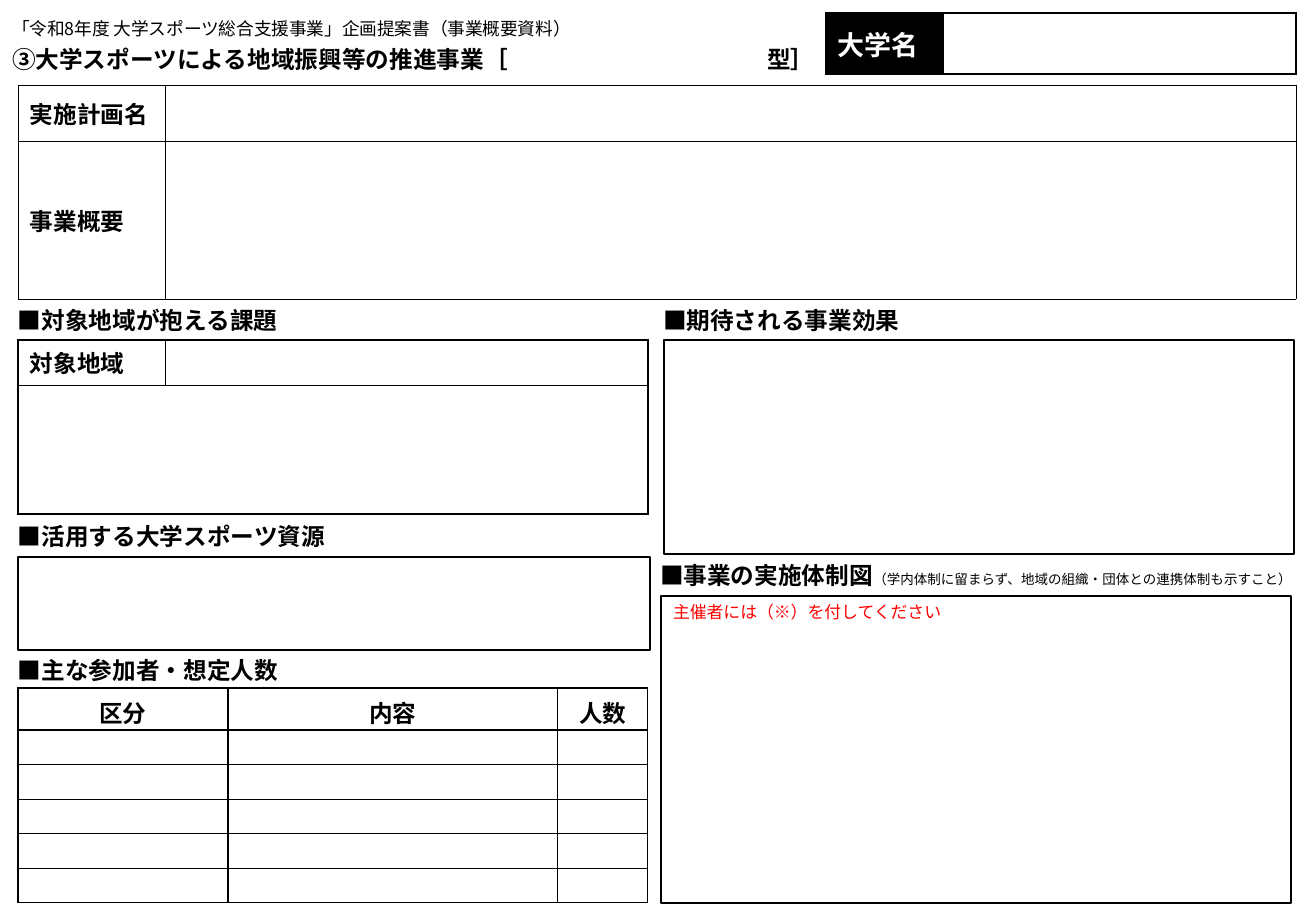
import lxml.etree
import pptx
import pptx.dml.color
import pptx.enum.shapes
import pptx.enum.text
import pptx.oxml.ns
import pptx.util

PX = 7526  # EMU in one px
FONT = "Noto Sans CJK JP"
BLACK, WHITE, RED = "000000", "FFFFFF", "FF0000"
ALIGN = pptx.enum.text.PP_ALIGN
ANCHOR = pptx.enum.text.MSO_ANCHOR

# Content: title lines as (text, size, bold)
TITLE = [
    ("「令和8年度 大学スポーツ総合支援事業」企画提案書（事業概要資料）", 10.5, False),
    ("③大学スポーツによる地域振興等の推進事業［\t型］", 14, True),
]
TYPE_TAB = 755

# Section headings: left, top, width, text, note
HEADINGS = [
    (6, 300, 300, "■対象地域が抱える課題", ""),
    (651, 300, 608, "■期待される事業効果", ""),
    (6, 516, 630, "■活用する大学スポーツ資源", ""),
    (648, 555, 664, "■事業の実施体制図", "（学内体制に留まらず、地域の組織・団体との連携体制も示すこと）"),
    (6, 650, 630, "■主な参加者・想定人数", ""),
]

# Answer boxes: left, top, width, height, text
BOXES = [
    (664, 340, 630, 214, ""),
    (18, 557, 632, 93, ""),
    (661, 596, 630, 307, "主催者には（※）を付してください"),
]

# Tables; pad is the top and bottom cell margin
PARTICIPANT_ROWS = 5
TABLES = [
    dict(at=(18, 85), cols=[147, 1131], rows=[56, 158], size=14, outer=0.5, inner=0.5,
         cells=[["実施計画名", ""], ["事業概要", ""]]),
    dict(at=(826, 13), cols=[117, 353], rows=[61], size=16, outer=1, inner=1,
         cells=[["大学名", ""]], fills=[BLACK, WHITE], color=WHITE),
    dict(at=(18, 340), cols=[147, 483], rows=[45, 129], size=14, outer=1, inner=0.5,
         cells=[["対象地域", ""], ["", ""]], merge=((1, 0), (1, 1))),
    dict(at=(18, 688), cols=[210, 330, 90], rows=[42] + [173 / PARTICIPANT_ROWS] * PARTICIPANT_ROWS,
         size=14, outer=0.75, inner=0.75, pad=(6, 0), align=ALIGN.CENTER,
         cells=[["区分", "内容", "人数"]] + [["", "", ""]] * PARTICIPANT_ROWS),
]


def px(n):
    return pptx.util.Emu(round(n * PX))


def rgb(value):
    return pptx.dml.color.RGBColor.from_string(value)


def add_xml(parent, tag, **attrs):
    return lxml.etree.SubElement(parent, pptx.oxml.ns.qn(tag), attrs)


def format_run(r, size, bold=False, color=BLACK):
    r.font.size = pptx.util.Pt(size)
    r.font.bold = bold
    r.font.color.rgb = rgb(color)
    r.font.name = FONT
    add_xml(r.font._element, "a:ea", typeface=FONT)


def set_frame(tf, anchor, top=0, right=12):
    tf.word_wrap = True
    tf.auto_size = pptx.enum.text.MSO_AUTO_SIZE.NONE
    tf.vertical_anchor = anchor
    tf.margin_left, tf.margin_right = px(12), px(right)
    tf.margin_top, tf.margin_bottom = px(top), 0


def set_borders(cell, widths):
    tc_pr = cell._tc.get_or_add_tcPr()
    for side, width in zip("LRTB", widths):
        ln = add_xml(tc_pr, "a:ln" + side, w=str(pptx.util.Pt(width)))
        add_xml(add_xml(ln, "a:solidFill"), "a:srgbClr", val=BLACK)


def add_form_table(slide, at, cols, rows, size, outer, inner, cells,
                   fills=None, color=BLACK, merge=None, pad=(4, 4), align=ALIGN.JUSTIFY):
    frame = slide.shapes.add_table(len(rows), len(cols), px(at[0]), px(at[1]),
                                   px(sum(cols)), px(sum(rows)))
    table = frame.table
    table.first_row = table.horz_banding = False
    for column, width in zip(table.columns, cols):
        column.width = px(width)
    for row, height in zip(table.rows, rows):
        row.height = px(height)
    if merge:
        table.cell(*merge[0]).merge(table.cell(*merge[1]))

    for i, texts in enumerate(cells):
        for j, text in enumerate(texts):
            cell = table.cell(i, j)
            if cell.is_spanned:
                continue
            last_col = j + cell.span_width == len(cols)
            edges = (j == 0, last_col, i == 0, i == len(rows) - 1)
            set_borders(cell, [outer if edge else inner for edge in edges])
            if fills:
                cell.fill.solid()
                cell.fill.fore_color.rgb = rgb(fills[j])
            else:
                cell.fill.background()
            cell.vertical_anchor = ANCHOR.MIDDLE
            cell.margin_left = cell.margin_right = px(12)
            cell.margin_top, cell.margin_bottom = px(pad[0]), px(pad[1])
            p = cell.text_frame.paragraphs[0]
            p.alignment = align
            if text:
                p.text = text
                format_run(p.runs[0], size, True, color)
            else:
                add_xml(p._p, "a:endParaRPr", sz="800")


def main():
    prs = pptx.Presentation()
    prs.slide_width, prs.slide_height = px(1316), px(911)
    slide = prs.slides.add_slide(prs.slide_layouts[5])

    # Title
    sp = slide.shapes.title
    sp.left, sp.top, sp.width, sp.height = px(0), px(18), px(826), px(62)
    tf = sp.text_frame
    set_frame(tf, ANCHOR.TOP, right=0)
    tf.text = "\n".join(text for text, _, _ in TITLE)
    for p, (_, size, bold) in zip(tf.paragraphs, TITLE):
        p.alignment = ALIGN.LEFT
        for r in p.runs:
            format_run(r, size, bold)
    p = tf.paragraphs[1]
    p.space_before = pptx.util.Pt(3.5)
    tabs = add_xml(p._p.get_or_add_pPr(), "a:tabLst")
    add_xml(tabs, "a:tab", pos=str(px(TYPE_TAB)), algn="l")

    # Tables
    for table in TABLES:
        add_form_table(slide, **table)

    # Answer boxes
    for left, top, width, height, text in BOXES:
        sp = slide.shapes.add_shape(pptx.enum.shapes.MSO_SHAPE.RECTANGLE,
                                    px(left), px(top), px(width), px(height))
        sp.shadow.inherit = False
        sp.fill.background()
        sp.line.color.rgb = rgb(BLACK)
        sp.line.width = pptx.util.Pt(1)
        if text:
            set_frame(sp.text_frame, ANCHOR.TOP, top=6)
            p = sp.text_frame.paragraphs[0]
            p.text = text
            p.alignment = ALIGN.LEFT
            format_run(p.runs[0], 10, color=RED)

    # Section headings
    for left, top, width, text, note in HEADINGS:
        sp = slide.shapes.add_textbox(px(left), px(top), px(width), px(41))
        set_frame(sp.text_frame, ANCHOR.MIDDLE)
        p = sp.text_frame.paragraphs[0]
        p.text = text
        format_run(p.runs[0], 14, True)
        if note:
            r = p.add_run()
            r.text = note
            format_run(r, 8)

    prs.save("out.pptx")


if __name__ == "__main__":
    main()
